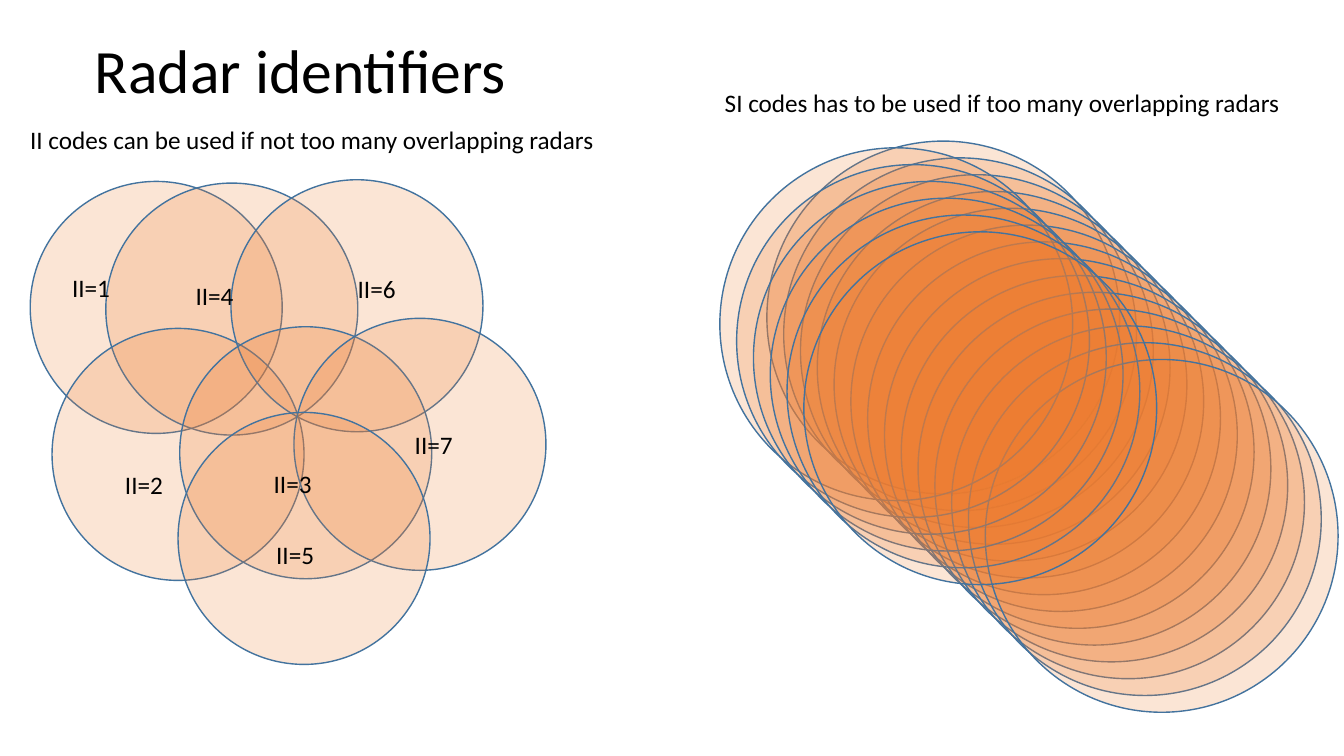
from lxml import etree
from pptx import Presentation
from pptx.dml.color import RGBColor
from pptx.enum.shapes import MSO_SHAPE
from pptx.enum.text import MSO_ANCHOR, PP_ALIGN
from pptx.oxml.ns import qn
from pptx.util import Pt

PX = 7620  # EMU per px, 120 px to the inch
ELLIPSE = MSO_SHAPE.OVAL
LEFT, MIDDLE = PP_ALIGN.LEFT, MSO_ANCHOR.MIDDLE
FONT = "Calibri"
COLORS = {"text": "000000", "coverage": "ED7D31", "outline": "43739E"}
OPACITY = 20  # percent

SMALL, LARGE, STEP = 300, 420, 20
# II code: circle left, top, label left, top
II_RADARS = {
    1: (36, 216, 74, 318),
    4: (126, 218, 221, 328),
    2: (62, 391, 137, 553),
    6: (275, 214, 414, 319),
    3: (214, 389, 314, 552),
    7: (350, 379, 482, 505),
    5: (212, 491, 317, 636),
}
# Diagonal rows of SI radars: first left, first top, count
SI_ROWS = [(913, 168, 14), (857, 176, 6)]


def emu(*lengths):
    return [length * PX for length in lengths]


def color(name):
    return RGBColor.from_string(COLORS[name])


def format_text(frame, size):
    frame.word_wrap = True
    for para in frame.paragraphs:
        para.alignment = LEFT
        for span in para.runs:
            span.font.name = FONT
            span.font.size = Pt(size)
            span.font.color.rgb = color("text")


def add_title(page, text, left, top, width, height):
    title = page.shapes.title
    title.left, title.top, title.width, title.height = emu(left, top, width, height)
    frame = title.text_frame
    frame.text = text
    frame.vertical_anchor = MIDDLE
    frame.paragraphs[0].line_spacing = 0.9
    format_text(frame, 44)


def add_label(page, text, left, top, width, height=48):
    box = page.shapes.add_textbox(*emu(left, top, width, height))
    box.text_frame.text = text
    format_text(box.text_frame, 18)


def add_radar(page, left, top, diameter):
    circle = page.shapes.add_shape(ELLIPSE, *emu(left, top, diameter, diameter))
    circle.shadow.inherit = False
    circle.fill.solid()
    circle.fill.fore_color.rgb = color("coverage")
    fill_color = circle.fill._xPr.find(qn("a:solidFill"))[0]
    etree.SubElement(fill_color, qn("a:alpha")).set("val", str(OPACITY * 1000))
    circle.line.color.rgb = color("outline")
    circle.line.width = Pt(1)


def main():
    deck = Presentation()
    deck.slide_width, deck.slide_height = emu(1600, 900)
    page = deck.slides.add_slide(deck.slide_layouts[5])
    add_title(page, "Radar identifiers", 101, 0, 1380, 174)

    # Few overlapping radars: circles first, labels above them
    for left, top, _, _ in II_RADARS.values():
        add_radar(page, left, top, SMALL)
    for code, (_, _, left, top) in II_RADARS.items():
        add_label(page, f"II={code}", left, top, 82)

    # Many overlapping radars
    for left, top, count in SI_ROWS:
        for index in range(count):
            add_radar(page, left + index * STEP, top + index * STEP, LARGE)

    # Captions
    add_label(page, "II codes can be used if not too many overlapping radars", 24, 142, 706)
    add_label(page, "SI codes has to be used if too many overlapping radars", 851, 98, 706)

    deck.save("out.pptx")


if __name__ == "__main__":
    main()
